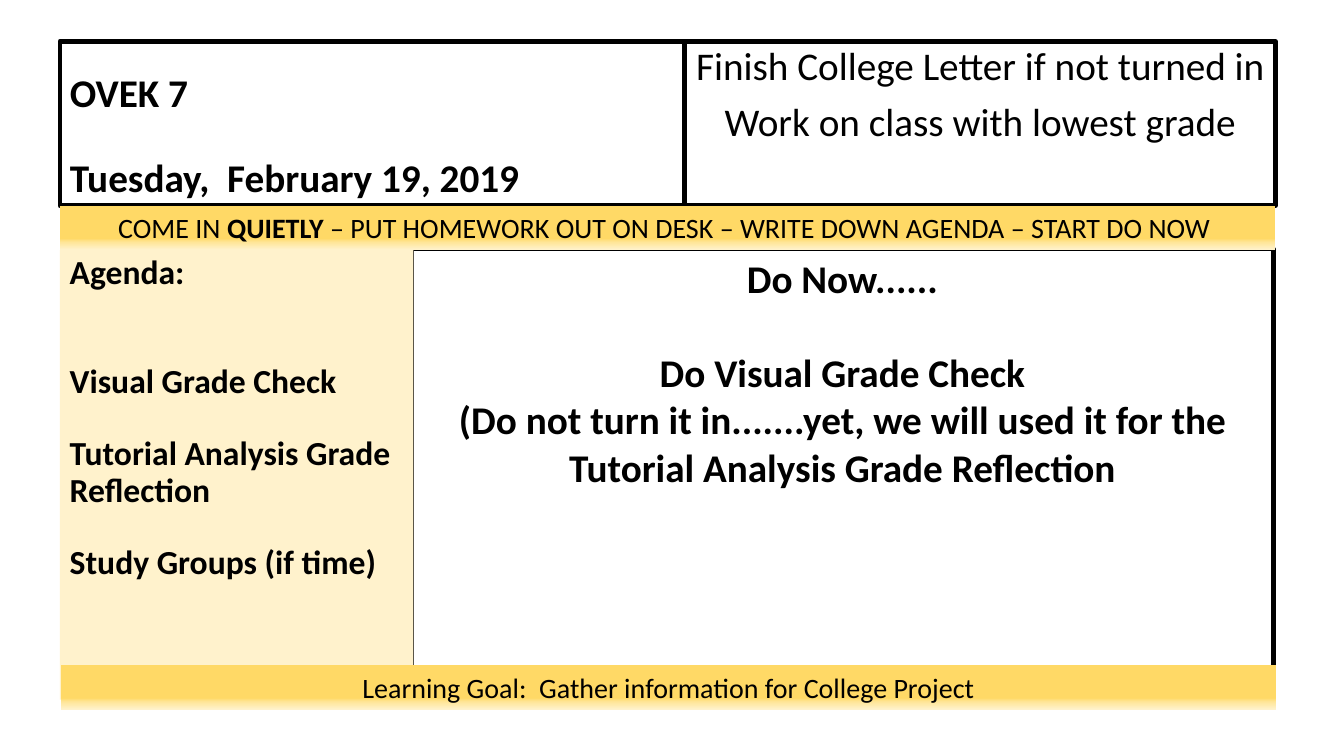
from lxml import etree
from pptx import Presentation
from pptx import util as u
from pptx.dml.color import RGBColor
from pptx.enum import shapes, text
from pptx.oxml import ns

LEFT, WIDTH = 4.45, 90.45
TOP, HEADER_HEIGHT = 5.47, 21.73
TITLE_WIDTH = 46.5
BANNER_TOP, BANNER_HEIGHT = TOP + HEADER_HEIGHT, 5.87
BODY_TOP = BANNER_TOP + BANNER_HEIGHT
GOAL_LEFT, GOAL_TOP = 4.52, 88
BANNER_STOPS = [(0, "FFD966"), (74, "FFD966"), (83, "FFE699"), (100, "FFF2CC")]


def color(value):
    """Turn a hex string into a colour."""
    return RGBColor.from_string(value)


def write(paragraph, content, size=28, bold=False, align=text.PP_ALIGN.CENTER,
          spacing=1.0, before=0, font="Calibri", ink="000000"):
    """Add formatted text to a paragraph."""
    paragraph.alignment = align
    paragraph.line_spacing = spacing
    paragraph.space_before = u.Pt(before)
    run = paragraph.add_run()
    run.text = content
    run.font.name, run.font.size, run.font.bold = font, u.Pt(size), bold
    run.font.color.rgb = color(ink)


class AgendaSlide:
    """Hold the style and the current slide, measured in percent of its size."""

    def __init__(self, presentation):
        """Add a title-only slide."""
        self.presentation = presentation
        self.slide = presentation.slides.add_slide(presentation.slide_layouts[5])
        self.border, self.border_width = "000000", u.Pt(3.25)

    def place(self, shape, left, top, width, height):
        """Move a shape to its place on the percent grid."""
        across = self.presentation.slide_width / 100
        down = self.presentation.slide_height / 100
        shape.left, shape.width = round(left * across), round(width * across)
        shape.top, shape.height = round(top * down), round(height * down)

    def frame(self, shape):
        """Give a shape the heavy border."""
        shape.line.color.rgb = color(self.border)
        shape.line.width = self.border_width

    def fill_text(self, shape, lines, anchor=text.MSO_ANCHOR.TOP, **style):
        """Write one paragraph for each pair of text and space before."""
        frame = shape.text_frame
        frame.word_wrap, frame.vertical_anchor = True, anchor
        frame.auto_size = text.MSO_AUTO_SIZE.NONE
        for index, (content, before) in enumerate(lines):
            paragraph = frame.add_paragraph() if index else frame.paragraphs[0]
            write(paragraph, content, before=before, **style)

    def title(self, box, lines, **style):
        """Format the title placeholder."""
        shape = self.slide.shapes.title
        self.place(shape, *box)
        self.frame(shape)
        self.fill_text(shape, lines, anchor=text.MSO_ANCHOR.BOTTOM, **style)

    def panel(self, box, lines, fill=None, **style):
        """Add a text panel, filled or else bordered."""
        shape = self.slide.shapes.add_shape(shapes.MSO_SHAPE.RECTANGLE, 0, 0, 0, 0)
        self.place(shape, *box)
        shape.shadow.inherit = False
        if fill:
            shape.fill.solid()
            shape.fill.fore_color.rgb = color(fill)
            shape.line.fill.background()
        else:
            shape.fill.background()
            self.frame(shape)
        self.fill_text(shape, lines, **style)
        return shape

    def banner(self, box, parts):
        """Add a gradient band with one line of plain and bold parts."""
        shape = self.panel(box, [], fill=BANNER_STOPS[0][1])
        shape.fill.gradient()
        shape.fill.gradient_angle = 270
        stops = shape._element.spPr.find(".//" + ns.qn("a:gsLst"))
        stops.clear()
        for position, value in BANNER_STOPS:
            stop = etree.SubElement(stops, ns.qn("a:gs"), pos=str(position * 1000))
            etree.SubElement(stop, ns.qn("a:srgbClr"), val=value)
        for content, bold in parts:
            write(shape.text_frame.paragraphs[0], content, size=20, bold=bold)


def main():
    """Build and save the agenda slide."""
    presentation = Presentation()
    presentation.slide_width, presentation.slide_height = u.Inches(13.33), u.Inches(7.5)
    agenda = AgendaSlide(presentation)
    agenda.title((LEFT, TOP, TITLE_WIDTH, HEADER_HEIGHT),
                 [("OVEK 7", 0), ("Tuesday,  February 19, 2019", 30)],
                 bold=True, align=text.PP_ALIGN.LEFT, spacing=0.9)
    agenda.panel((LEFT + TITLE_WIDTH, TOP, WIDTH - TITLE_WIDTH, HEADER_HEIGHT),
                 [("Finish College Letter if not turned in", 10),
                  ("Work on class with lowest grade", 10)], spacing=0.9)
    agenda.panel((30.6, 32.95, 64.15, 57.87),
                 [("Do Now......", 0), ("Do Visual Grade Check", 34),
                  ("(Do not turn it in.......yet, we will used it for the "
                   "Tutorial Analysis Grade Reflection", 0)], bold=True)
    agenda.banner((LEFT, BANNER_TOP, WIDTH, BANNER_HEIGHT),
                  [("COME IN ", False), ("QUIETLY", True),
                   (" – PUT HOMEWORK OUT ON DESK – WRITE DOWN AGENDA – START DO NOW ", False)])
    agenda.panel((LEFT, BODY_TOP, 26.3, 59.47),
                 [("Agenda:", 0), ("Visual Grade Check", 52),
                  ("Tutorial Analysis Grade Reflection", 26),
                  ("Study Groups (if time)", 26)],
                 fill="FFF2CC", size=24, bold=True, align=text.PP_ALIGN.LEFT, spacing=0.9)
    agenda.banner((GOAL_LEFT, GOAL_TOP, WIDTH, BANNER_HEIGHT),
                  [("Learning Goal:  Gather information for College Project", False)])
    presentation.save("out.pptx")


if __name__ == "__main__":
    main()
